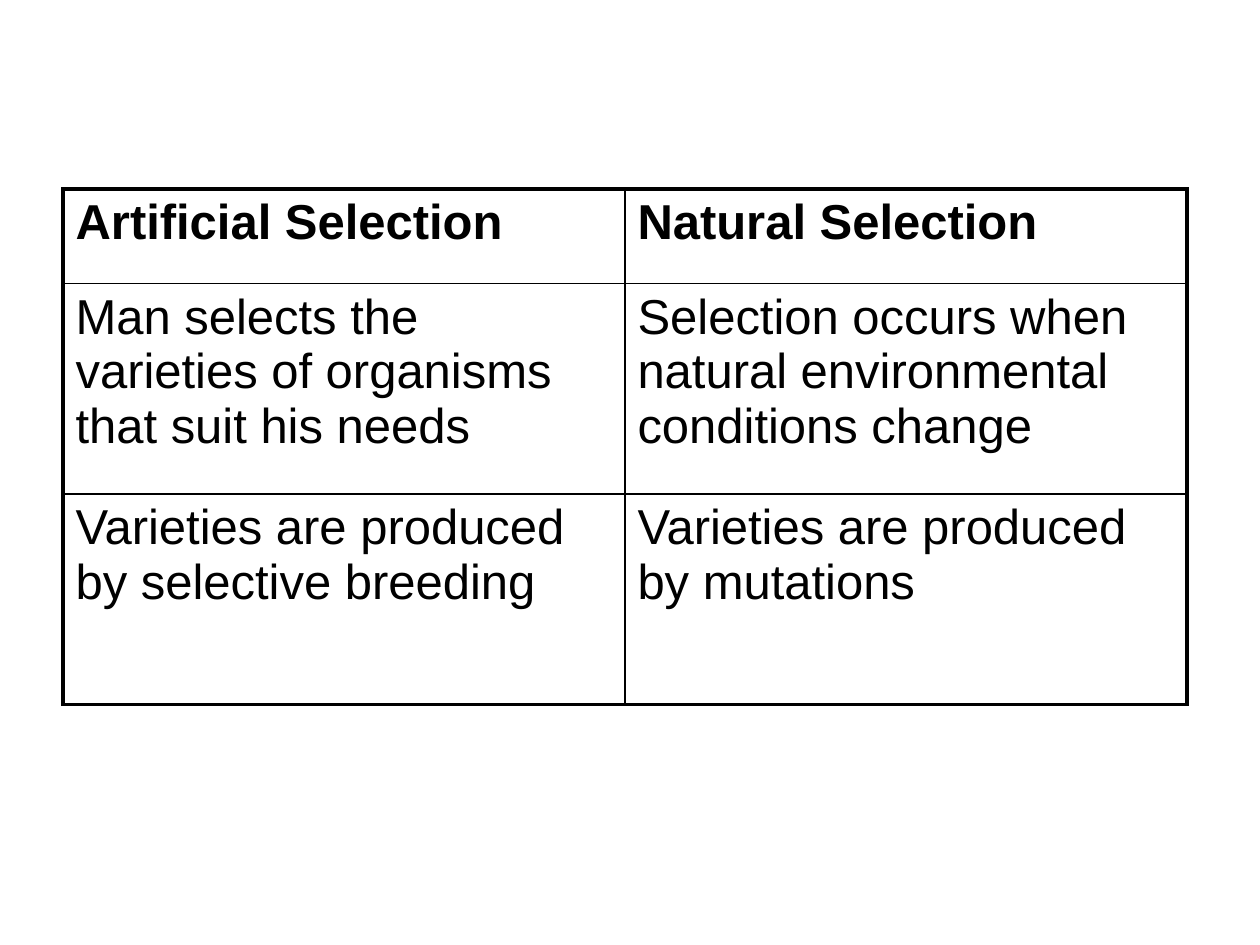
from dataclasses import dataclass

from lxml.etree import SubElement
from pptx import Presentation
from pptx.dml.color import RGBColor
from pptx.oxml.ns import qn
from pptx.util import Inches, Pt


@dataclass(frozen=True)
class Theme:
    font: str = "Arial"
    size: int = 28
    ink: str = "000000"
    paper: str = "FFFFFF"
    outer_line: float = 2.25
    inner_line: float = 1


class SlideBuilder:
    def __init__(self, slide, theme):
        self.slide = slide
        self.theme = theme

    def add_table(self, left, top, column_widths, row_heights, rows):
        table = self.slide.shapes.add_table(
            len(rows), len(column_widths), Inches(left), Inches(top),
            Inches(sum(column_widths)), Inches(sum(row_heights)),
        ).table
        table.horz_banding = False
        table.first_row = False
        for column, width in zip(table.columns, column_widths):
            column.width = Inches(width)
        for row, height in zip(table.rows, row_heights):
            row.height = Inches(height)
        last_row, last_column = len(rows) - 1, len(column_widths) - 1
        for i, texts in enumerate(rows):
            for j, text in enumerate(texts):
                cell = table.cell(i, j)
                outer_edges = {
                    "L": j == 0, "R": j == last_column,
                    "T": i == 0, "B": i == last_row,
                }
                self.set_borders(cell, outer_edges)
                self.set_text(cell, text, bold=i == 0)

    def set_borders(self, cell, outer_edges):
        properties = cell._tc.get_or_add_tcPr()
        for side, is_outer in outer_edges.items():
            width = self.theme.outer_line if is_outer else self.theme.inner_line
            line = SubElement(properties, qn(f"a:ln{side}"), w=str(Pt(width)))
            fill = SubElement(line, qn("a:solidFill"))
            SubElement(fill, qn("a:srgbClr"), val=self.theme.ink)

    def set_text(self, cell, text, bold):
        cell.fill.solid()
        cell.fill.fore_color.rgb = RGBColor.from_string(self.theme.paper)
        cell.text = text
        font = cell.text_frame.paragraphs[0].font
        font.name = self.theme.font
        font.size = Pt(self.theme.size)
        font.bold = bold
        font.color.rgb = RGBColor.from_string(self.theme.ink)


def main():
    presentation = Presentation()
    presentation.slide_width = Inches(10)
    presentation.slide_height = Inches(7.5)
    slide = presentation.slides.add_slide(presentation.slide_layouts[6])
    builder = SlideBuilder(slide, Theme())
    builder.add_table(
        0.5, 1.5, [4.46, 4.46], [0.75, 1.67, 1.67],
        [
            ("Artificial Selection", "Natural Selection"),
            ("Man selects the varieties of organisms that suit his needs",
             "Selection occurs when natural environmental conditions change"),
            ("Varieties are produced by selective breeding",
             "Varieties are produced by mutations"),
        ],
    )
    presentation.save("out.pptx")


if __name__ == "__main__":
    main()
